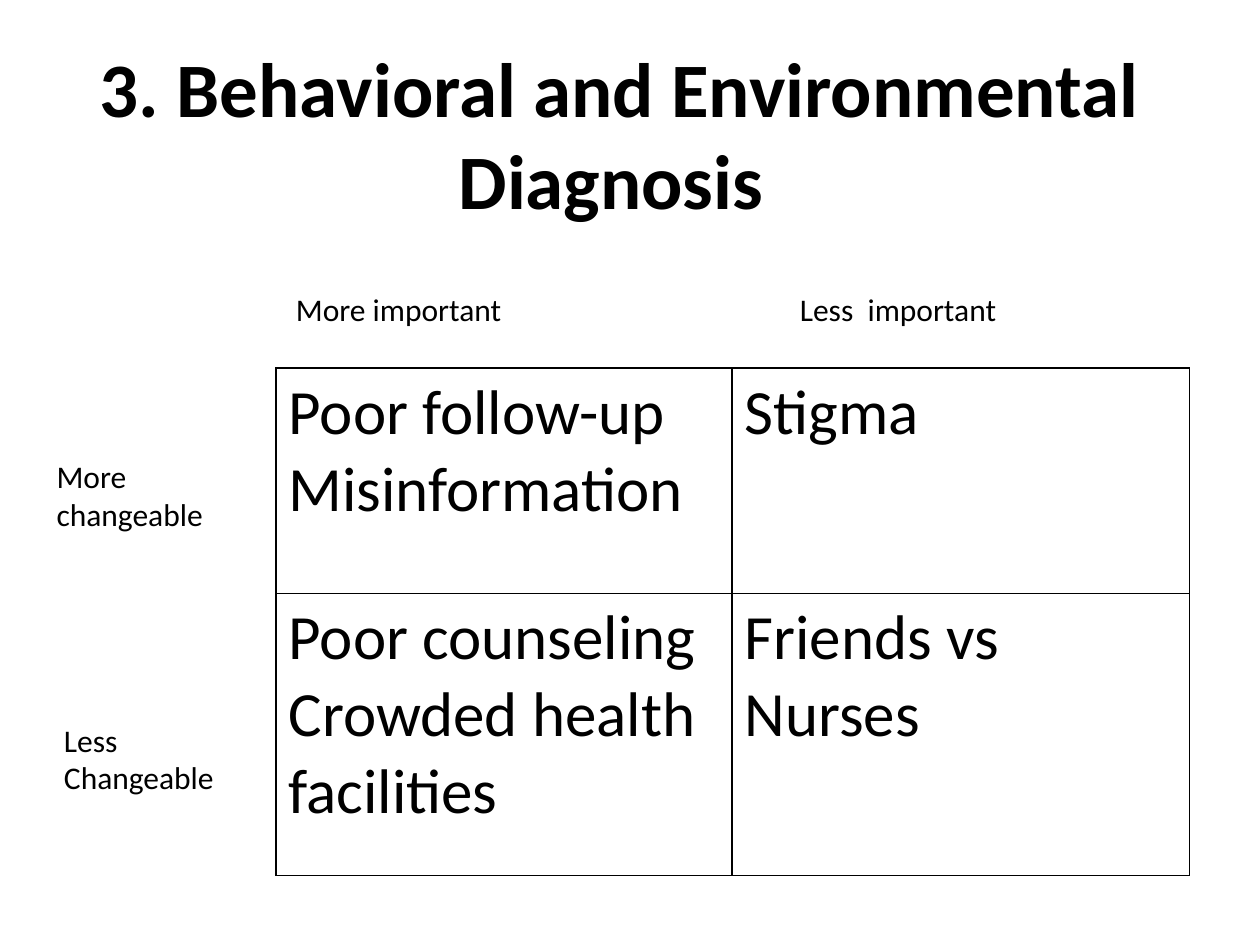
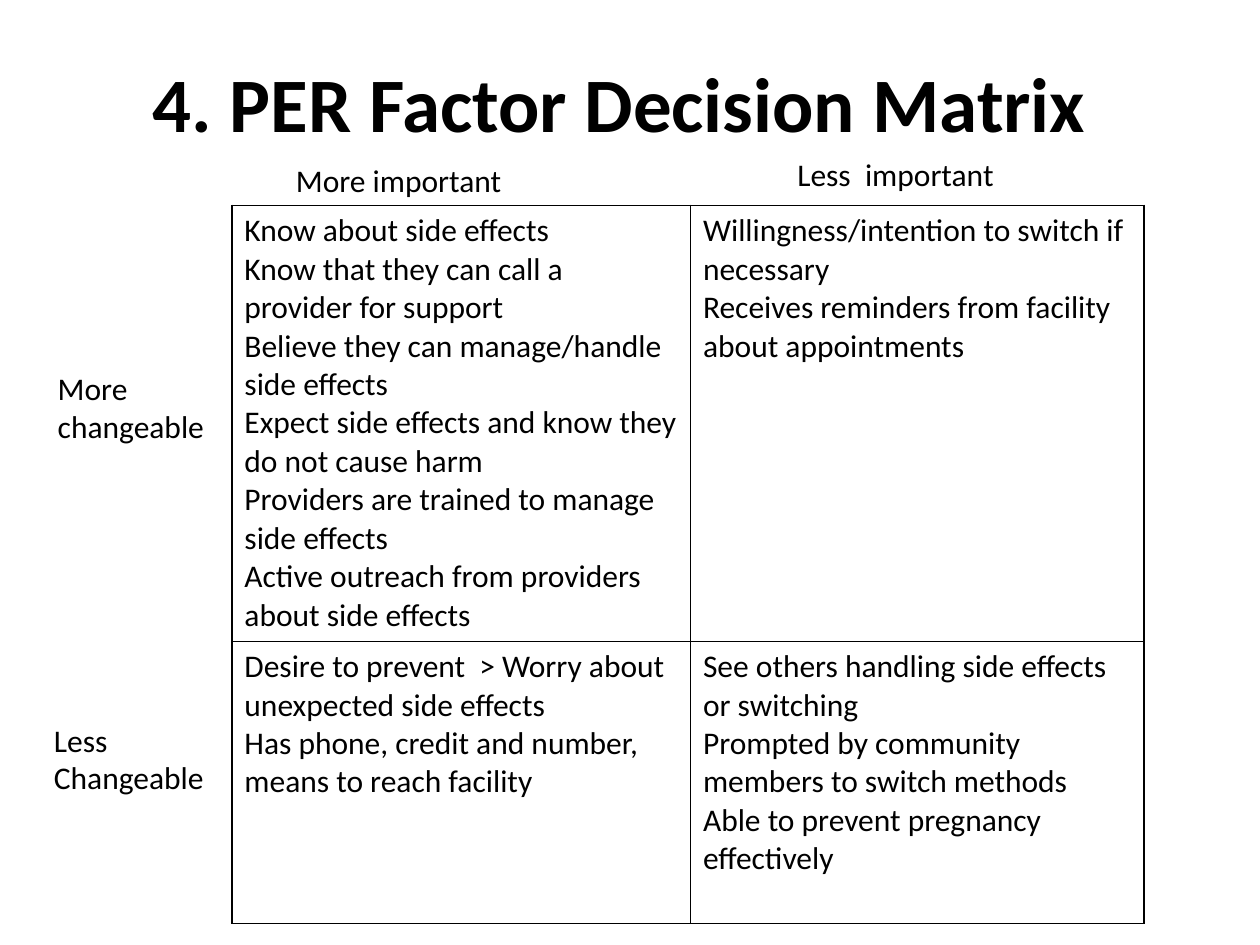
from dataclasses import dataclass

from lxml.etree import SubElement
from pptx import Presentation
from pptx.dml.color import RGBColor
from pptx.enum.text import MSO_ANCHOR, MSO_AUTO_SIZE, PP_ALIGN
from pptx.oxml.ns import qn
from pptx.util import Inches, Pt


@dataclass(frozen=True)
class Theme:
    """Colours, font and type sizes shared by the slides."""
    ink: str = "000000"
    paper: str = "FFFFFF"
    font: str = "Calibri"
    title: int = 44
    label: int = 18
    rule: int = 1


THEME = Theme()
TITLE_ONLY = 5

MATRICES = [
    {
        "title": "3. Behavioral and Environmental Diagnosis ",
        "title_top": 0.25,
        "corner": (2.19, 2.92),
        "columns": (3.62, 3.63),
        "rows": (1.79, 2.24),
        "size": 36,
        "factors": [
            [["Poor follow-up", "Misinformation"], ["Stigma"]],
            [["Poor counseling", "Crowded health facilities"], ["Friends vs Nurses"]],
        ],
        "axes": [
            ("More important", (2.25, 2.25, 1.91, 0.4)),
            ("Less  important", (6.25, 2.25, 1.84, 0.4)),
            ("More changeable", (0.35, 3.58, 1.65, 0.71)),
            ("Less Changeable", (0.41, 5.67, 1.53, 1.01)),
        ],
    },
    {
        "title": "4. PER Factor Decision Matrix",
        "title_top": 0,
        "corner": (1.84, 1.63),
        "columns": (3.64, 3.6),
        "rows": (3.46, 2.24),
        "size": 18,
        "factors": [
            [
                [
                    "Know about side effects",
                    "Know that they can call a provider for support",
                    "Believe they can manage/handle side effects",
                    "Expect side effects and know they do not cause harm",
                    "Providers are trained to manage side effects",
                    "Active outreach from providers about side effects",
                ],
                [
                    "Willingness/intention to switch if necessary",
                    "Receives reminders from facility about appointments",
                ],
            ],
            [
                [
                    "Desire to prevent  > Worry about unexpected side effects",
                    "Has phone, credit and number, means to reach facility",
                ],
                [
                    "See others handling side effects or switching",
                    "Prompted by community members to switch methods",
                    "Able to prevent pregnancy effectively",
                ],
            ],
        ],
        "axes": [
            ("More important", (2.25, 1.23, 1.91, 0.4)),
            ("Less  important", (6.23, 1.18, 1.84, 0.4)),
            ("More changeable", (0.36, 2.88, 1.65, 0.71)),
            ("Less Changeable", (0.33, 5.67, 1.53, 1.01)),
        ],
    },
]


def apply(target, values):
    """Set each attribute named in values on target."""
    for name, value in values.items():
        setattr(target, name, value)


def write(frame, lines, size, bold=False, align=PP_ALIGN.LEFT):
    """Fill a text frame with one formatted paragraph per line."""
    frame.text = "\n".join(lines)
    for paragraph in frame.paragraphs:
        paragraph.alignment = align
        apply(paragraph.font, {"name": THEME.font, "size": Pt(size), "bold": bold})
        paragraph.font.color.rgb = RGBColor.from_string(THEME.ink)


def place_title(slide, text, top):
    """Position and format the title placeholder."""
    heading = slide.shapes.title
    apply(heading, {"left": Inches(0.67), "top": Inches(top),
                    "width": Inches(8.5), "height": Inches(1.61)})
    apply(heading.text_frame, {"word_wrap": True, "auto_size": MSO_AUTO_SIZE.NONE,
                               "vertical_anchor": MSO_ANCHOR.MIDDLE})
    write(heading.text_frame, [text], THEME.title, True, PP_ALIGN.CENTER)


def rule_cell(cell):
    """Draw a thin line on the four sides of a cell."""
    properties = cell._tc.get_or_add_tcPr()
    for position, side in enumerate(("a:lnL", "a:lnR", "a:lnT", "a:lnB")):
        line = SubElement(properties, qn(side), w=str(Pt(THEME.rule)))
        fill = SubElement(line, qn("a:solidFill"))
        SubElement(fill, qn("a:srgbClr"), val=THEME.ink)
        properties.insert(position, line)


def add_matrix(slide, corner, columns, rows, factors, size):
    """Add the ruled table of factors."""
    bounds = [Inches(v) for v in (*corner, sum(columns), sum(rows))]
    matrix = slide.shapes.add_table(len(rows), len(columns), *bounds).table
    apply(matrix, {"first_row": False, "horz_banding": False})
    for column, width in zip(matrix.columns, columns):
        column.width = Inches(width)
    for r, height in enumerate(rows):
        matrix.rows[r].height = Inches(height)
        for c, lines in enumerate(factors[r]):
            cell = matrix.cell(r, c)
            cell.fill.solid()
            cell.fill.fore_color.rgb = RGBColor.from_string(THEME.paper)
            rule_cell(cell)
            write(cell.text_frame, lines, size)


def add_axis_label(slide, text, bounds):
    """Add a label naming a row or column of the matrix."""
    frame = slide.shapes.add_textbox(*map(Inches, bounds)).text_frame
    frame.word_wrap = True
    write(frame, [text], THEME.label)


def main():
    """Build both decision matrix slides and save them."""
    deck = Presentation()
    apply(deck, {"slide_width": Inches(10), "slide_height": Inches(7.5)})
    for content in MATRICES:
        slide = deck.slides.add_slide(deck.slide_layouts[TITLE_ONLY])
        place_title(slide, content["title"], content["title_top"])
        add_matrix(slide, content["corner"], content["columns"], content["rows"],
                   content["factors"], content["size"])
        for text, bounds in content["axes"]:
            add_axis_label(slide, text, bounds)
    deck.save("out.pptx")


if __name__ == "__main__":
    main()
